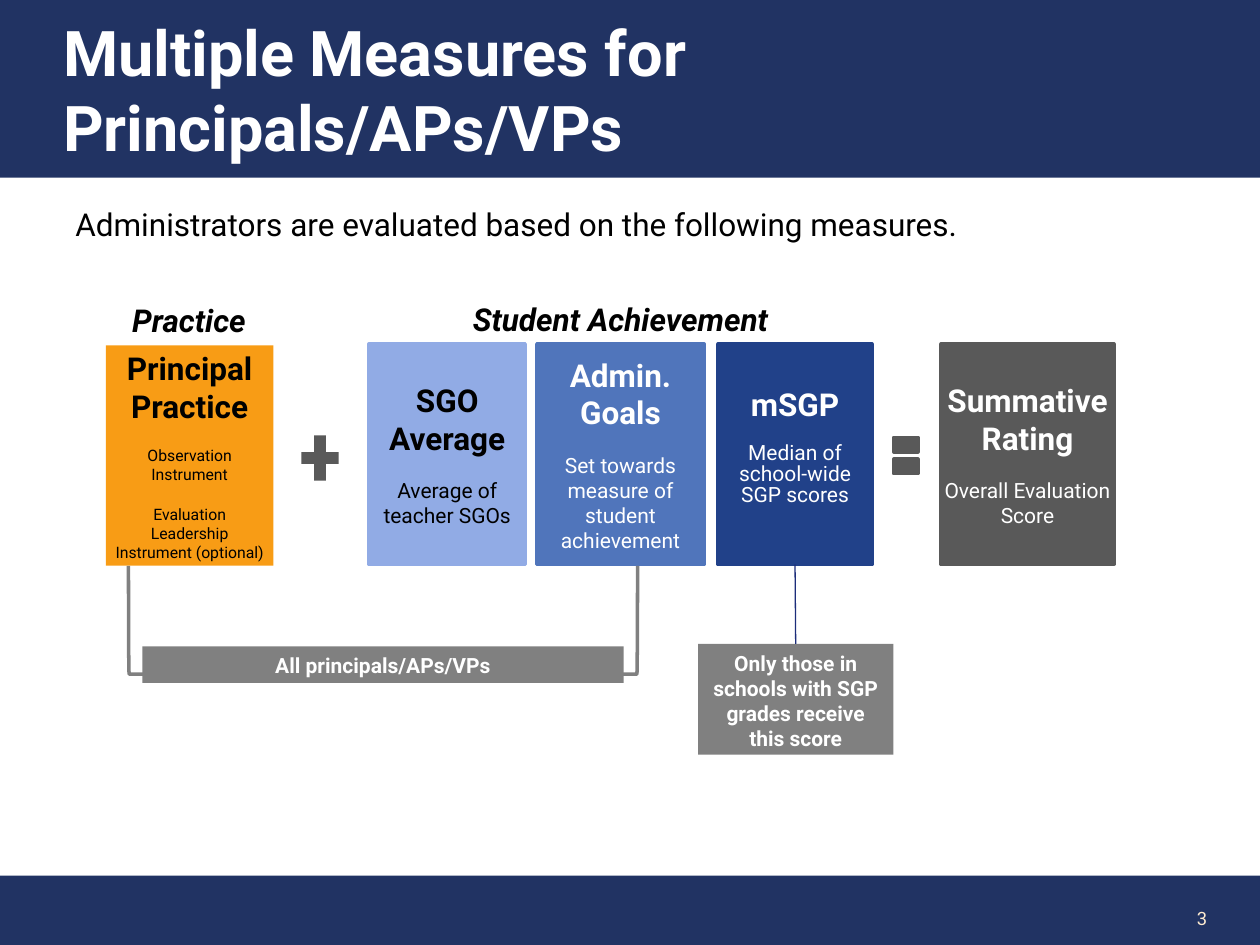
from pptx import Presentation
from pptx.dml.color import RGBColor
from pptx.enum.shapes import MSO_CONNECTOR, MSO_SHAPE as SHAPE
from pptx.enum.text import MSO_ANCHOR as ANCHOR, MSO_AUTO_SIZE as FIT, PP_ALIGN as ALIGN
from pptx.oxml.ns import qn
from pptx.util import Inches, Pt

COLORS = {
    "navy": "213363", "cream": "FEEBD0", "white": "FFFFFF", "black": "000000",
    "orange": "F89C15", "light blue": "91ABE5", "mid blue": "5075BB",
    "deep blue": "214189", "dark gray": "595959", "gray": "808080", "line": "1C2D7A",
}


def rgb(name):
    return RGBColor.from_string(COLORS[name])


def add_box(kind, at, fill=None, line=None):
    """Add a preset shape, or a text box when kind is None."""
    place = [Inches(v) for v in at]
    if kind is None:
        return s.shapes.add_textbox(*place)
    sp = s.shapes.add_shape(kind, *place)
    sp.shadow.inherit = False
    if fill:
        sp.fill.solid()
        sp.fill.fore_color.rgb = rgb(fill)
    else:
        sp.fill.background()
    if line:
        sp.line.color.rgb = rgb(line)
        sp.line.width = Pt(2)
    else:
        sp.line.fill.background()
    return sp


def write(sp, lines, color, align=ALIGN.CENTER, anchor=ANCHOR.TOP, side=0.1,
          after=0, spacing=None, fit=FIT.NONE):
    """Fill a shape with (text, size, bold, italic) paragraphs."""
    tf = sp.text_frame
    tf.word_wrap = True
    tf.auto_size = fit
    tf.vertical_anchor = anchor
    tf.margin_left = tf.margin_right = Inches(side)
    tf.margin_top = tf.margin_bottom = Inches(0.05)
    for i, (text, size, bold, italic) in enumerate(lines):
        p = tf.add_paragraph() if i else tf.paragraphs[0]
        p.text = text
        p.alignment = align
        p.space_after = Pt(after)
        if spacing:
            p.line_spacing = Pt(spacing)
        font = p.font
        font.name, font.size, font.bold, font.italic = "Roboto", Pt(size), bold, italic
        font.color.rgb = rgb(color)


prs = Presentation()
prs.slide_width, prs.slide_height = Inches(10), Inches(7.5)
s = prs.slides.add_slide(prs.slide_layouts[5])

# Footer bar and slide number
add_box(SHAPE.RECTANGLE, (0, 6.95, 10, 0.55), "navy")
write(add_box(None, (8.22, 7.09, 1.46, 0.4)), [("3", 10.5, False, False)],
      "cream", ALIGN.RIGHT, ANCHOR.MIDDLE)

# Title band
title = s.shapes.title
title.left, title.top, title.width, title.height = 0, 0, Inches(10), Inches(1.41)
title.fill.solid()
title.fill.fore_color.rgb = rgb("navy")
write(title, [("Multiple Measures for Principals/APs/VPs", 36, True, False)],
      "white", ALIGN.LEFT, ANCHOR.MIDDLE)
title.text_frame.margin_left = Inches(0.5)

# Introduction
write(add_box(None, (0.5, 1.58, 7.5, 0.4)),
      [("Administrators are evaluated based on the following measures.", 18, False, False)],
      "black", ALIGN.LEFT, fit=FIT.SHAPE_TO_FIT_TEXT)

# Measure cards: left, top, width, fill, outlined, text color, side inset, spacing, heading, details
CARDS = [
    (0.84, 2.74, 1.33, "orange", False, "black", 0.07, None, "Principal Practice",
     ["Observation Instrument", "Evaluation Leadership Instrument (optional)"], 9),
    (2.93, 2.73, 1.24, "light blue", True, "black", 0.05, None, "SGO Average",
     ["Average of teacher SGOs"], 12),
    (4.26, 2.73, 1.33, "mid blue", True, "white", 0.03, None, "Admin. Goals",
     ["Set towards measure of student achievement"], 12),
    (5.7, 2.73, 1.22, "deep blue", True, "white", 0.03, 12, "mSGP",
     ["Median of school-wide SGP scores"], 12),
    (7.47, 2.73, 1.37, "dark gray", True, "white", 0, None, "Summative Rating",
     ["Overall Evaluation Score"], 12),
]
cards = {}
for left, top, width, fill, outlined, color, side, spacing, heading, details, size in CARDS:
    card = add_box(SHAPE.RECTANGLE, (left, top, width, 1.75), fill, fill if outlined else None)
    lines = [(heading, 18, True, False)] + [(d, size, False, False) for d in details]
    write(card, lines, color, anchor=ANCHOR.MIDDLE, side=side, after=12, spacing=spacing)
    cards[heading] = card

# Plus and equals signs
add_box(SHAPE.MATH_PLUS, (2.34, 3.39, 0.4, 0.49), "dark gray")
add_box(SHAPE.MATH_EQUAL, (7.06, 3.37, 0.26, 0.49), "dark gray", "dark gray")

# Bracket under the first three cards, turned to open upward
bracket = add_box(SHAPE.LEFT_BRACKET, (2.61, 2.9, 0.86, 4.04), line="gray")
bracket.adjustments[0] = 0.006
bracket.rotation = 270

# Notes on who receives each score
NOTES = [
    ((1.13, 5.13, 3.82, 0.29), "All principals/APs/VPs"),
    ((5.54, 5.11, 1.55, 0.88), "Only those in schools with SGP grades receive this score"),
]
for at, text in NOTES:
    note = add_box(SHAPE.RECTANGLE, at, "gray")
    write(note, [(text, 12, True, False)], "white", fit=FIT.SHAPE_TO_FIT_TEXT)

# Connector from the last note up to the mSGP card
link = s.shapes.add_connector(MSO_CONNECTOR.STRAIGHT, 0, 0, 0, 0)
link.begin_connect(note, 0)
link.end_connect(cards["mSGP"], 2)
link.line.color.rgb = rgb("line")
link.line.width = Pt(0.75)
sp_pr = link._element.spPr
sp_pr.append(sp_pr.makeelement(qn("a:effectLst"), {}))

# Group headings
for at, text in [((0.17, 2.34, 2.66, 0.39), "Practice"),
                 ((2.93, 2.33, 3.99, 0.39), "Student Achievement")]:
    write(add_box(None, at), [(text, 18, True, True)], "black", fit=FIT.SHAPE_TO_FIT_TEXT)

prs.save("out.pptx")
